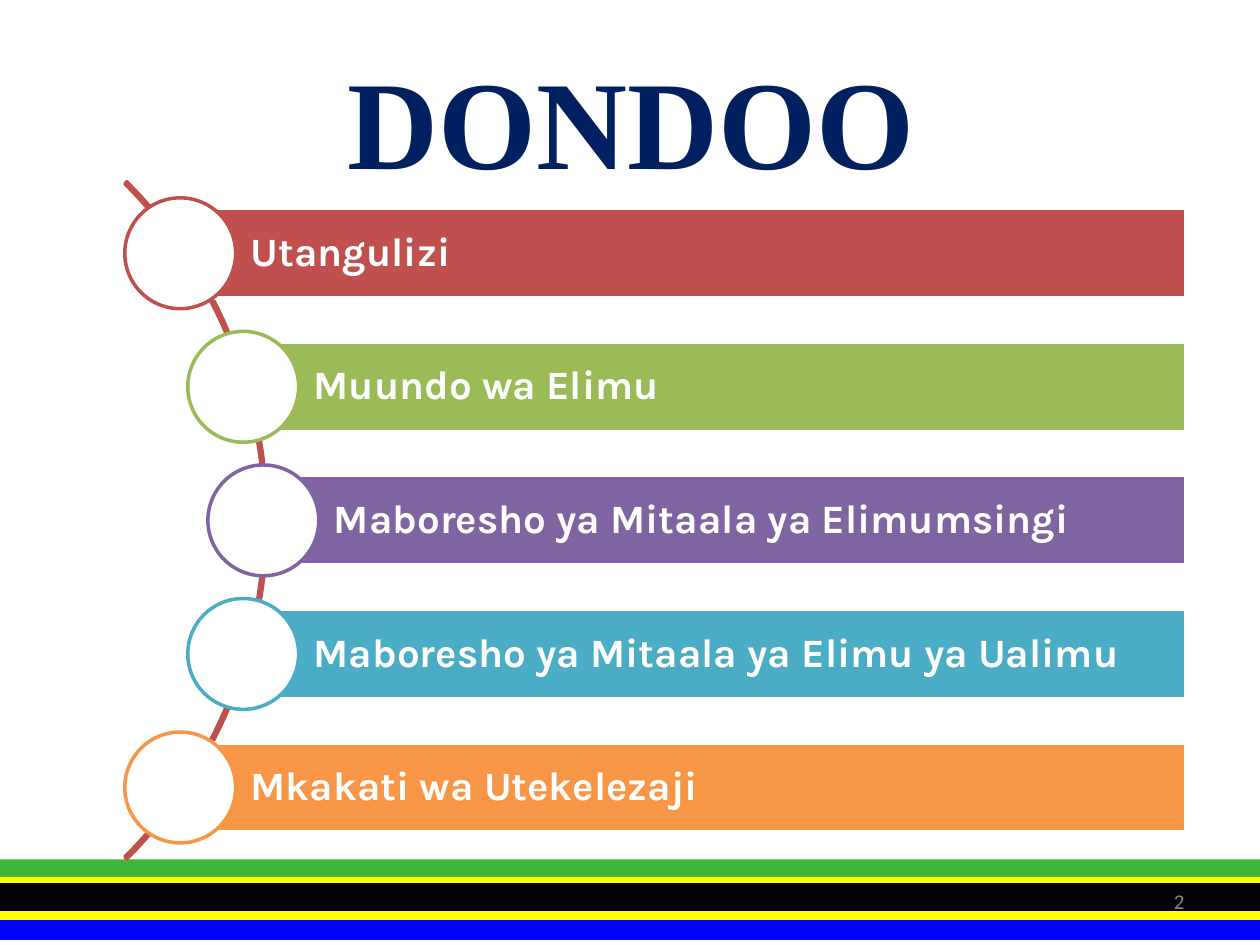
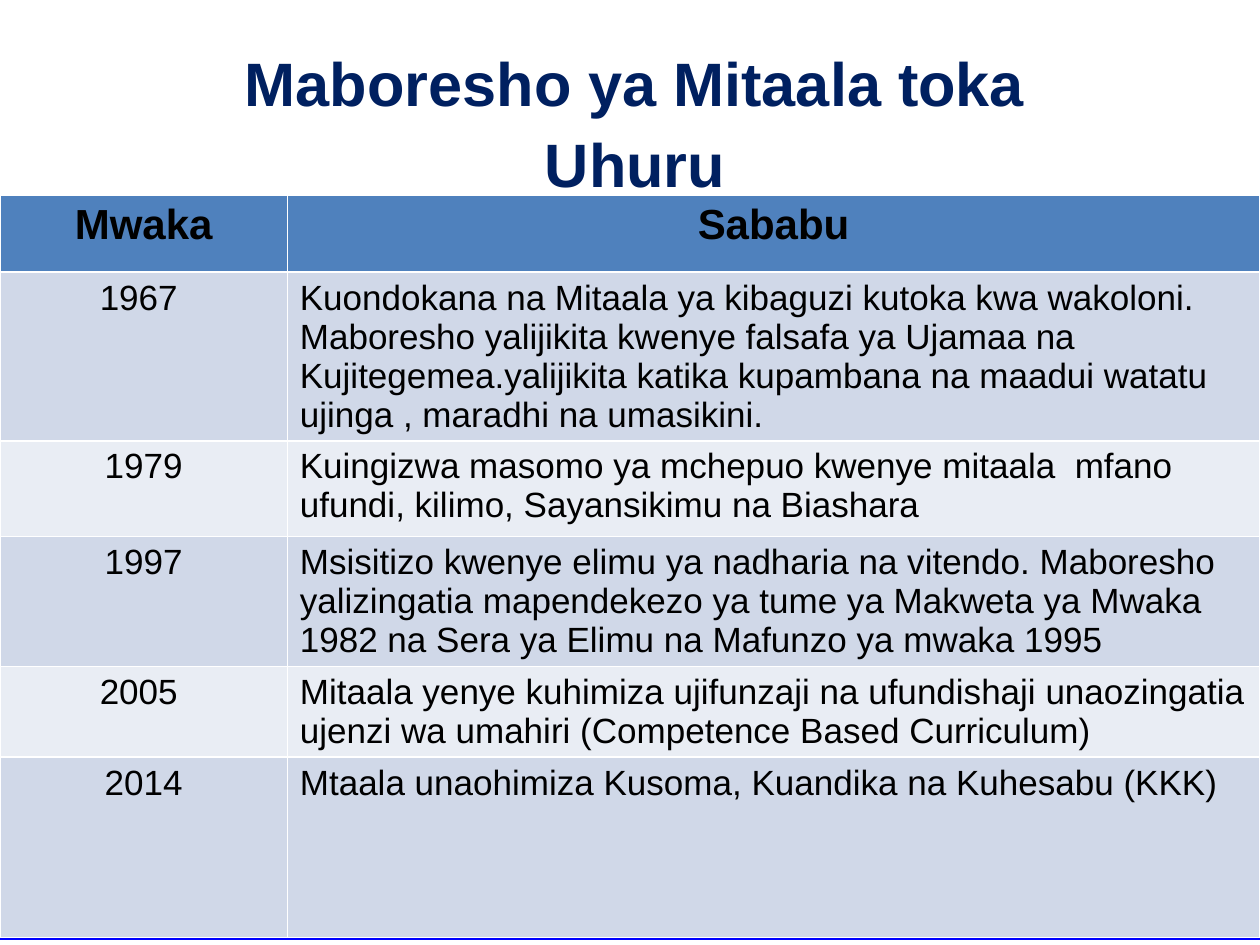
from pptx import Presentation
from pptx.dml.color import RGBColor
from pptx.enum.shapes import MSO_SHAPE as SHAPE
from pptx.enum.text import MSO_ANCHOR as ANCHOR, MSO_AUTO_SIZE as AUTO, PP_ALIGN as ALIGN
from pptx.util import Inches, Pt

WHITE = RGBColor(0xFF, 0xFF, 0xFF)
BLACK = RGBColor(0, 0, 0)
NAVY = RGBColor(0x00, 0x20, 0x60)
GRAY = RGBColor(0x89, 0x89, 0x89)
FLAG_BLUE = RGBColor(0x00, 0x00, 0xFF)
FLAG_GREEN = RGBColor(0x3F, 0xB6, 0x36)
FLAG_YELLOW = RGBColor(0xFF, 0xFF, 0x00)
RED = RGBColor(0xC0, 0x50, 0x4D)
GREEN = RGBColor(0x9B, 0xBB, 0x59)
PURPLE = RGBColor(0x80, 0x64, 0xA2)
TEAL = RGBColor(0x4B, 0xAC, 0xC6)
ORANGE = RGBColor(0xF7, 0x96, 0x46)
HEADER_BLUE = RGBColor(0x4F, 0x81, 0xBD)
ROW_DARK = RGBColor(0xD0, 0xD8, 0xE8)
ROW_LIGHT = RGBColor(0xE9, 0xED, 0xF4)

FLAG_STRIPES = [
    (7.23, 0.23, FLAG_BLUE),
    (6.82, 0.22, FLAG_GREEN),
    (6.96, 0.11, FLAG_YELLOW),
    (7.19, 0.11, FLAG_YELLOW),
    (7.01, 0.22, BLACK),
]
TOPICS = [
    ("Utangulizi", 0.44, RED),
    ("Muundo wa Elimu", 0.94, GREEN),
    ("Maboresho ya Mitaala ya Elimumsingi", 1.1, PURPLE),
    ("Maboresho ya Mitaala ya Elimu ya Ualimu", 0.94, TEAL),
    ("Mkakati wa Utekelezaji", 0.44, ORANGE),
]
REFORMS = [
    ("Mwaka", "Sababu"),
    ("1967 ", "Kuondokana na Mitaala ya kibaguzi kutoka kwa wakoloni. Maboresho "
     "yalijikita kwenye falsafa ya Ujamaa na Kujitegemea.yalijikita katika "
     "kupambana na maadui watatu ujinga , maradhi na umasikini."),
    ("1979", "Kuingizwa masomo ya mchepuo kwenye mitaala  mfano ufundi, kilimo, "
     "Sayansikimu na Biashara"),
    ("1997", "Msisitizo kwenye elimu ya nadharia na vitendo. Maboresho yalizingatia "
     "mapendekezo ya tume ya Makweta ya Mwaka 1982 na Sera ya Elimu na Mafunzo "
     "ya mwaka 1995"),
    ("2005 ", "Mitaala yenye kuhimiza ujifunzaji na ufundishaji unaozingatia ujenzi "
     "wa umahiri (Competence Based Curriculum)"),
    ("2014", "Mtaala unaohimiza Kusoma, Kuandika na Kuhesabu (KKK)"),
]
COL_WIDTHS = [2.28, 7.72]
ROW_HEIGHTS = [0.61, 1.07, 0.76, 0.8, 0.69, 1.43]


def write(tf, text, *, size, font, color, bold=False, align=ALIGN.LEFT, spacing=None):
    tf.word_wrap = True
    p = tf.paragraphs[0]
    p.alignment = align
    if spacing:
        p.line_spacing = spacing
    r = p.add_run()
    r.text = text
    r.font.size = Pt(size)
    r.font.name = font
    r.font.bold = bold
    r.font.color.rgb = color


def add_shape(slide, kind, box, fill=None, line=None):
    sp = slide.shapes.add_shape(kind, *map(Inches, box))
    sp.shadow.inherit = False
    if fill is None:
        sp.fill.background()
    else:
        sp.fill.solid()
        sp.fill.fore_color.rgb = fill
    if line is None:
        sp.line.fill.background()
    else:
        sp.line.color.rgb = line
        sp.line.width = Pt(2)
    return sp


def add_flag_to_master(prs, slide):
    tree = prs.slide_master.element.cSld.spTree
    for i, (top, height, color) in enumerate(FLAG_STRIPES):
        sp = add_shape(slide, SHAPE.RECTANGLE, (0, top, 10, height), color)
        sp.name = f"Flag stripe {i + 1}"
        sp.element.nvSpPr.cNvPr.set("id", str(101 + i))
        tree.insert(2 + i, sp.element)


def set_title(slide, text, box, **fmt):
    title = slide.shapes.title
    title.left, title.top, title.width, title.height = map(Inches, box)
    tf = title.text_frame
    tf.auto_size = AUTO.NONE
    tf.vertical_anchor = ANCHOR.MIDDLE
    write(tf, text, color=NAVY, bold=True, align=ALIGN.CENTER, **fmt)


def add_page_number(slide, text, box):
    tf = slide.shapes.add_textbox(*map(Inches, box)).text_frame
    tf.vertical_anchor = ANCHOR.MIDDLE
    write(tf, text, size=12, font="Calibri", color=GRAY, align=ALIGN.RIGHT)


def add_topic_list(slide, box):
    left, top, width, height = box
    bar_height, circle, step, arc_size = 0.71, 0.88, 1.06, 7.6
    arc = add_shape(slide, SHAPE.BLOCK_ARC,
                    (left - 6.47, top + (height - arc_size) / 2, arc_size, arc_size),
                    line=RED)
    for i, value in enumerate((189, 27, 0.003)):
        arc.adjustments[i] = value

    for i, (text, indent, color) in enumerate(TOPICS):
        x, middle = left + indent, top + circle / 2 + i * step
        bar = add_shape(slide, SHAPE.RECTANGLE,
                        (x, middle - bar_height / 2, width - indent, bar_height),
                        color, WHITE)
        tf = bar.text_frame
        tf.vertical_anchor = ANCHOR.MIDDLE
        tf.margin_left = Inches(0.56)
        tf.margin_top = tf.margin_right = tf.margin_bottom = Inches(0.06)
        write(tf, text, size=23, font="Karla", color=WHITE, bold=True, spacing=0.9)
        add_shape(slide, SHAPE.OVAL,
                  (x - circle / 2, middle - circle / 2, circle, circle), WHITE, color)


def add_reform_table(slide, left, top):
    box = (left, top, sum(COL_WIDTHS), sum(ROW_HEIGHTS))
    table = slide.shapes.add_table(len(REFORMS), len(COL_WIDTHS), *map(Inches, box)).table
    for col, width in zip(table.columns, COL_WIDTHS):
        col.width = Inches(width)
    for i, (row, height, texts) in enumerate(zip(table.rows, ROW_HEIGHTS, REFORMS)):
        row.height = Inches(height)
        header = i == 0
        fill = HEADER_BLUE if header else ROW_DARK if i % 2 else ROW_LIGHT
        for j, (cell, text) in enumerate(zip(row.cells, texts)):
            cell.fill.solid()
            cell.fill.fore_color.rgb = fill
            write(cell.text_frame, text, size=24 if header else 20, font="Arial",
                  color=BLACK, bold=header,
                  align=ALIGN.CENTER if header or j == 0 else ALIGN.LEFT)


def build_outline_slide(slide):
    set_title(slide, "DONDOO", (0.51, 0.7, 9, 0.49), size=72, font="Times New Roman")
    add_page_number(slide, "2", (7.17, 6.95, 2.33, 0.4))
    add_topic_list(slide, (0.99, 1.57, 8.42, 5.12))


def build_reforms_slide(slide):
    set_title(slide, "Maboresho ya Mitaala toka Uhuru", (1.38, 0.36, 7.32, 1.17),
              size=35, font="Arial", spacing=1.1)
    add_reform_table(slide, 0, 1.55)


def main():
    prs = Presentation()
    prs.slide_width, prs.slide_height = Inches(10), Inches(7.5)
    title_only = prs.slide_layouts[5]
    outline = prs.slides.add_slide(title_only)
    add_flag_to_master(prs, outline)
    build_outline_slide(outline)
    build_reforms_slide(prs.slides.add_slide(title_only))
    prs.save("out.pptx")


if __name__ == "__main__":
    main()
